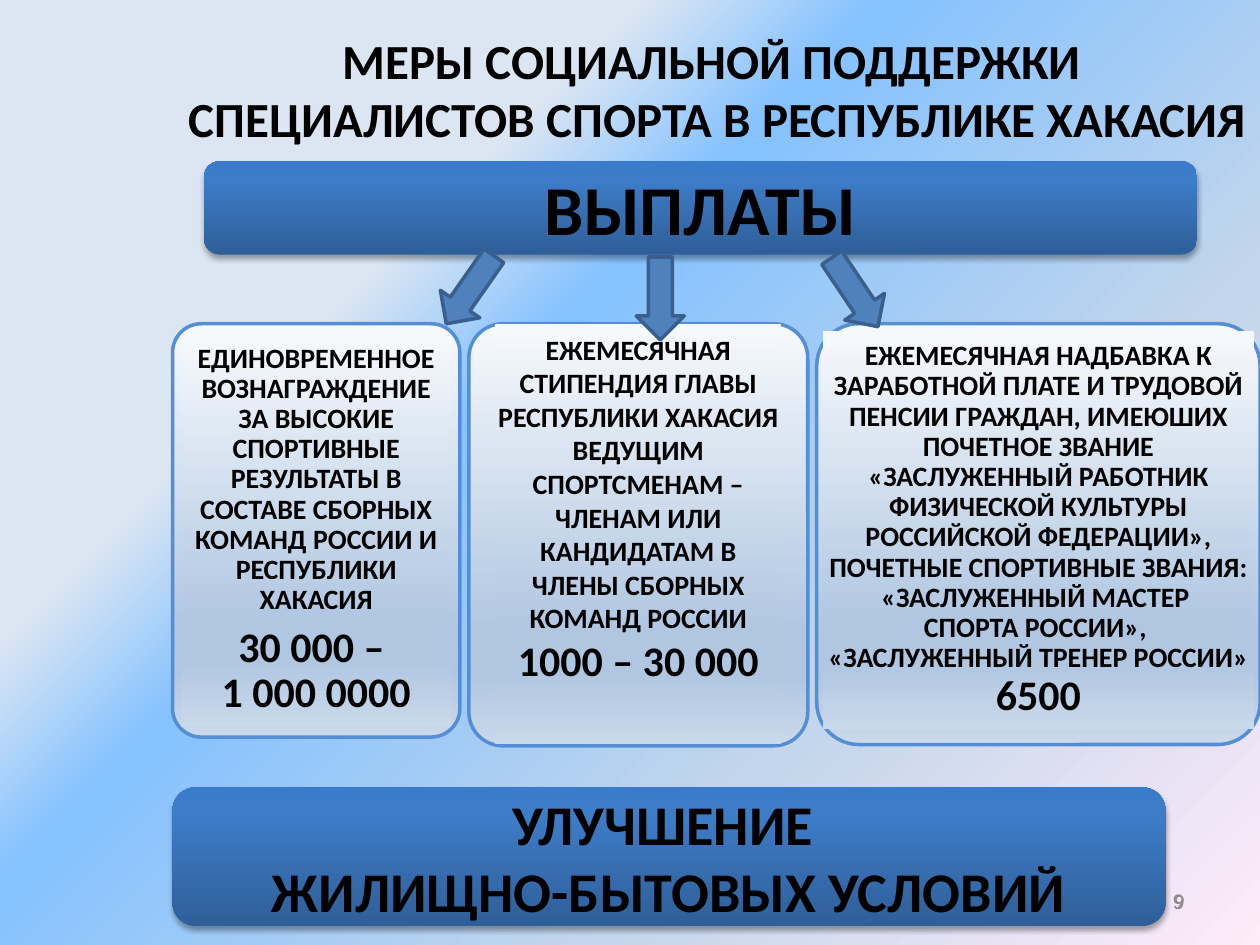
from lxml import etree
from pptx import Presentation
from pptx.dml.color import RGBColor
from pptx.enum import shapes as kinds, text as t
from pptx.oxml.ns import qn
from pptx.util import Pt

BLACK = RGBColor(0x00, 0x00, 0x00)
CARD_LINE = RGBColor(0x55, 0x8E, 0xD5)
ARROW_FILL = RGBColor(0x4F, 0x81, 0xBD)
ARROW_LINE = RGBColor(0x3A, 0x5F, 0x8C)
NUMBER_GRAYS = [("Calibri", RGBColor(0x8C, 0x8C, 0x8C)),
                ("Arial", RGBColor(0x89, 0x89, 0x89))]

# Gradient stops: position in percent, colour, opacity in percent
SKY = [(29, RGBColor(0xDC, 0xE6, 0xF2), 60), (40, RGBColor(0x85, 0xC2, 0xFF), 100),
       (70, RGBColor(0xC4, 0xD6, 0xEB), 100), (100, RGBColor(0xFF, 0xEB, 0xFA), 100)]
PALE = [(0, RGBColor(0xF6, 0xF9, 0xFC), 100), (74, RGBColor(0xB0, 0xC6, 0xE1), 100),
        (83, RGBColor(0xB0, 0xC6, 0xE1), 100), (100, RGBColor(0xCA, 0xD9, 0xEB), 100)]
DEEP = [(0, RGBColor(0x2F, 0x5F, 0x99), 100), (80, RGBColor(0x3D, 0x7C, 0xC7), 100),
        (100, RGBColor(0x3A, 0x7C, 0xCB), 100)]

TITLE = ["МЕРЫ СОЦИАЛЬНОЙ ПОДДЕРЖКИ ", "СПЕЦИАЛИСТОВ СПОРТА В РЕСПУБЛИКЕ ХАКАСИЯ"]

# Bars: box, lines, text size
BARS = [
    ((116.6, 92.2, 567.4, 53.3), ["ВЫПЛАТЫ"], 40),
    ((98.6, 450, 567.4, 79.2), ["УЛУЧШЕНИЕ ", "ЖИЛИЩНО-БЫТОВЫХ УСЛОВИЙ"], 32),
]

# Cards: size, panel margins (side, top, bottom), line spacing,
# space after the wording, room below the text, wording, amounts
CARDS = [
    dict(size=(164.2, 236.2), margins=(5, 5.8, 5.8), spacing=0.9, after=6, below=1.4,
         wording=["ЕДИНОВРЕМЕННОЕ ВОЗНАГРАЖДЕНИЕ ЗА ВЫСОКИЕ СПОРТИВНЫЕ РЕЗУЛЬТАТЫ "
                  "В СОСТАВЕ СБОРНЫХ КОМАНД РОССИИ И РЕСПУБЛИКИ ХАКАСИЯ"],
         amounts=["30 000 – ", "1 000 0000"]),
    dict(size=(193.7, 241.2), margins=(15.1, 0, 0.7), spacing=1, after=0, below=30.7,
         wording=["ЕЖЕМЕСЯЧНАЯ СТИПЕНДИЯ ГЛАВЫ РЕСПУБЛИКИ ХАКАСИЯ ВЕДУЩИМ СПОРТСМЕНАМ – "
                  "ЧЛЕНАМ ИЛИ КАНДИДАТАМ В ЧЛЕНЫ СБОРНЫХ КОМАНД РОССИИ"],
         amounts=["1000 – 30 000"]),
    dict(size=(253.4, 240.5), margins=(3.6, 4.3, 8.7), spacing=0.9, after=0, below=1.4,
         wording=["ЕЖЕМЕСЯЧНАЯ НАДБАВКА К ЗАРАБОТНОЙ ПЛАТЕ И ТРУДОВОЙ ПЕНСИИ ГРАЖДАН, "
                  "ИМЕЮШИХ ПОЧЕТНОЕ ЗВАНИЕ «ЗАСЛУЖЕННЫЙ РАБОТНИК ФИЗИЧЕСКОЙ КУЛЬТУРЫ "
                  "РОССИЙСКОЙ ФЕДЕРАЦИИ», ПОЧЕТНЫЕ СПОРТИВНЫЕ ЗВАНИЯ: «ЗАСЛУЖЕННЫЙ МАСТЕР ",
                  "СПОРТА РОССИИ», ", "«ЗАСЛУЖЕННЫЙ ТРЕНЕР РОССИИ»"],
         amounts=["6500"]),
]
CARDS_LEFT, CARDS_TOP, CARD_GAP = 98.6, 185, 5.1

# Arrows: centre x, centre y, rotation
ARROWS = [(268.6, 165.6, 125), (377.3, 170.6, 90), (488.5, 167, 56.1)]
ARROW_W, ARROW_H = 47.4, 27.4


def set_gradient(fill, element, stops, angle):
    """Fill with any number of stops; the angle runs clockwise."""
    fill.gradient()
    fill.gradient_angle = 360 - angle
    stop_list = next(element.iter(qn("a:gsLst")))
    for old in list(stop_list):
        stop_list.remove(old)
    for position, color, opacity in stops:
        stop = etree.SubElement(stop_list, qn("a:gs"), pos=str(position * 1000))
        value = etree.SubElement(stop, qn("a:srgbClr"), val=str(color))
        if opacity < 100:
            etree.SubElement(value, qn("a:alpha"), val=str(opacity * 1000))


def add_soft_shadow(shape):
    effects = shape._element.spPr.find(qn("a:effectLst"))
    shadow = etree.SubElement(effects, qn("a:outerShdw"), blurRad=str(Pt(3.1)),
                              dist=str(Pt(1.8)), dir="5400000", rotWithShape="0")
    color = etree.SubElement(shadow, qn("a:srgbClr"), val=str(BLACK))
    etree.SubElement(color, qn("a:alpha"), val="35000")


def add_box(parent, kind, box, line=None):
    shape = parent.shapes.add_shape(kind, *map(Pt, box))
    shape.shadow.inherit = False
    if line is None:
        shape.line.fill.background()
    else:
        shape.line.color.rgb = line
        shape.line.width = Pt(2)
    return shape


def write(frame, lines, anchor=t.MSO_ANCHOR.MIDDLE, align=t.PP_ALIGN.CENTER,
          font="Calibri", color=BLACK, bold=True, spacing=1):
    """Write (text, size, space after) lines, one paragraph each."""
    frame.word_wrap = True
    frame.vertical_anchor = anchor
    frame.text = "\n".join(line[0] for line in lines)
    for paragraph, (_, size, after) in zip(frame.paragraphs, lines):
        paragraph.alignment = align
        paragraph.line_spacing = spacing
        paragraph.space_after = Pt(after)
        for run in paragraph.runs:
            run.font.name = font
            run.font.size = Pt(size)
            run.font.bold = bold
            run.font.color.rgb = color


def add_card(slide, left, card):
    width, height = card["size"]
    side, above, under = card["margins"]
    group = slide.shapes.add_group_shape()
    frame = add_box(group, kinds.MSO_SHAPE.ROUNDED_RECTANGLE,
                    (left, CARDS_TOP, width, height), CARD_LINE)
    frame.adjustments[0] = 0.1
    panel = add_box(group, kinds.MSO_SHAPE.RECTANGLE,
                    (left + side, CARDS_TOP + above,
                     width - 2 * side, height - above - under))
    for part in (frame, panel):
        set_gradient(part.fill, part._element, PALE, 90)
    body = panel.text_frame
    body.margin_left = body.margin_right = body.margin_top = Pt(1.4)
    body.margin_bottom = Pt(card["below"])
    write(body, [(line, 16, card["after"]) for line in card["wording"]]
          + [(line, 24, 0) for line in card["amounts"]], spacing=card["spacing"])


def main():
    deck = Presentation()
    deck.slide_width, deck.slide_height = Pt(720), Pt(540)
    slide = deck.slides.add_slide(deck.slide_layouts[6])
    set_gradient(slide.background.fill, slide._element, SKY, 45)

    title = slide.shapes.add_textbox(Pt(99.4), Pt(13.7), Pt(620.6), Pt(74.9))
    write(title.text_frame, [(line, 28, 0) for line in TITLE], anchor=t.MSO_ANCHOR.TOP)

    for font, gray in NUMBER_GRAYS:
        number = slide.shapes.add_textbox(Pt(516), Pt(500.5), Pt(168), Pt(28.8))
        write(number.text_frame, [("9", 12, 0)], align=t.PP_ALIGN.RIGHT,
              font=font, color=gray, bold=False)

    left = CARDS_LEFT
    for card in CARDS:
        add_card(slide, left, card)
        left += card["size"][0] + CARD_GAP

    for box, lines, size in BARS:
        bar = add_box(slide, kinds.MSO_SHAPE.ROUNDED_RECTANGLE, box)
        set_gradient(bar.fill, bar._element, DEEP, 270)
        add_soft_shadow(bar)
        write(bar.text_frame, [(line, size, 0) for line in lines])

    for x, y, rotation in ARROWS:
        arrow = add_box(slide, kinds.MSO_SHAPE.RIGHT_ARROW,
                        (x - ARROW_W / 2, y - ARROW_H / 2, ARROW_W, ARROW_H), ARROW_LINE)
        arrow.fill.solid()
        arrow.fill.fore_color.rgb = ARROW_FILL
        arrow.rotation = rotation

    deck.save("out.pptx")


if __name__ == "__main__":
    main()
